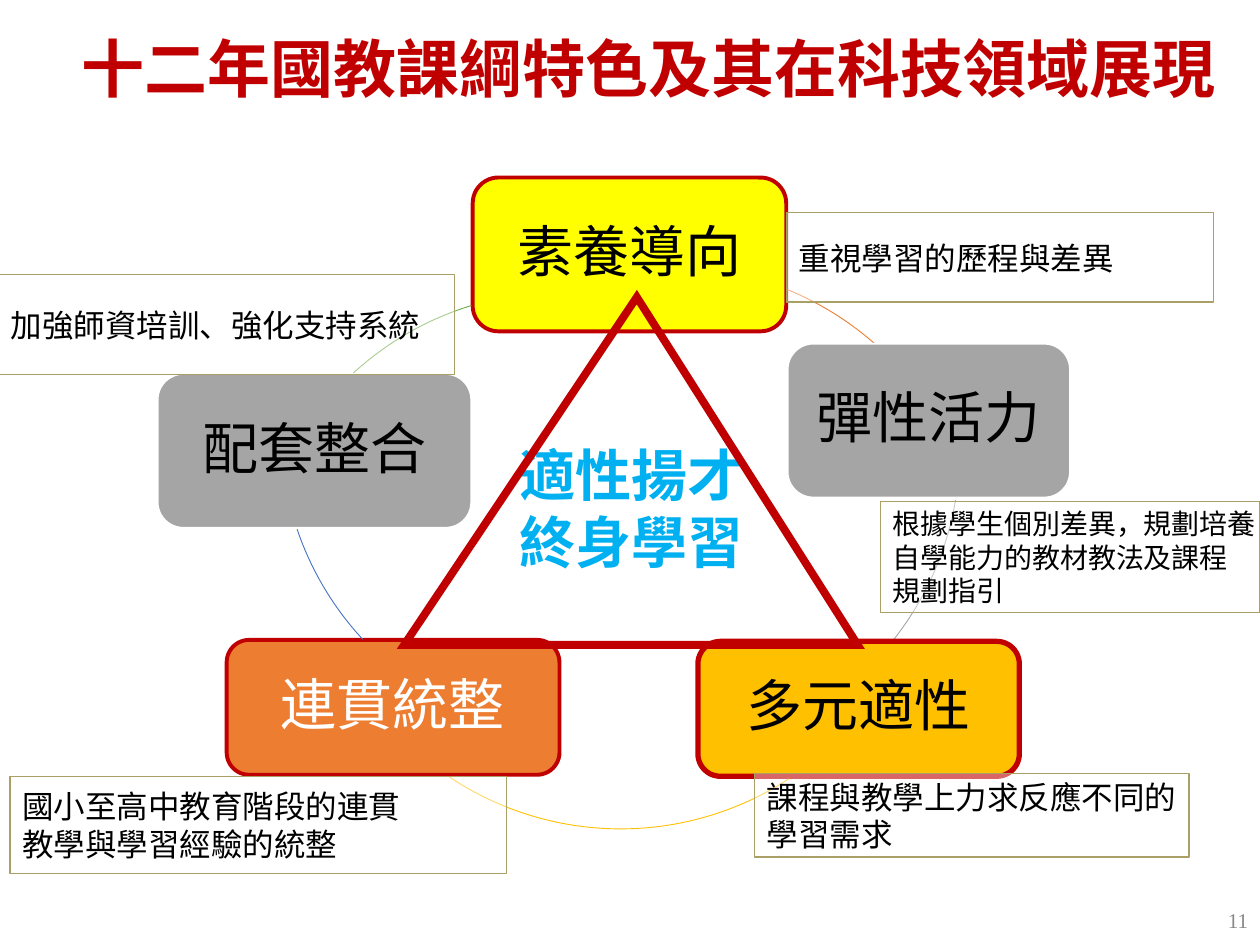
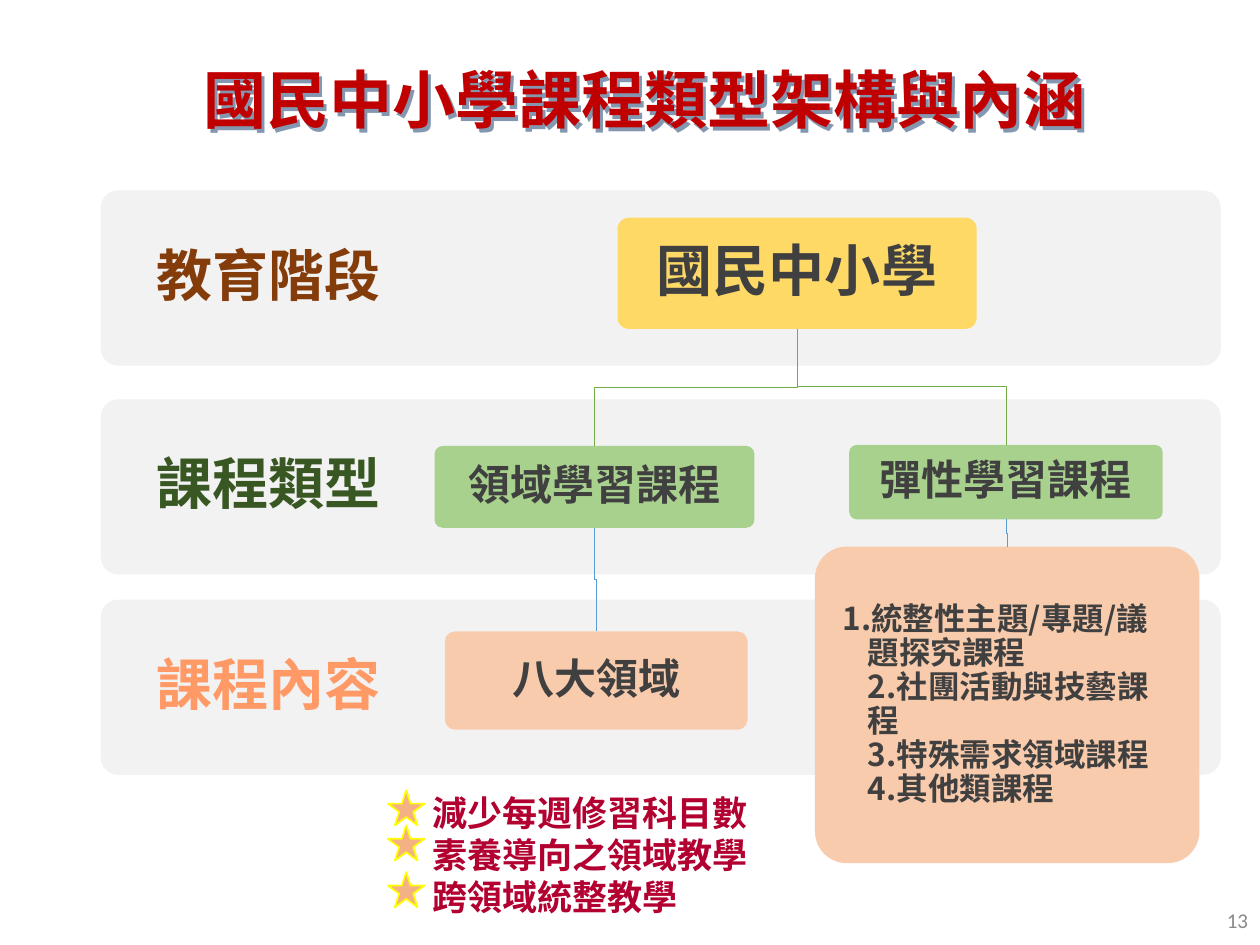
from lxml import etree
from pptx import Presentation
from pptx.dml.color import RGBColor
from pptx.enum.shapes import MSO_SHAPE
from pptx.enum.text import MSO_ANCHOR, PP_ALIGN
from pptx.oxml.ns import qn
from pptx.util import Cm, Pt

ROUNDED, RECTANGLE = MSO_SHAPE.ROUNDED_RECTANGLE, MSO_SHAPE.RECTANGLE
ARC, STAR, TRIANGLE = MSO_SHAPE.ARC, MSO_SHAPE.STAR_5_POINT, MSO_SHAPE.ISOSCELES_TRIANGLE
TOP, MIDDLE = MSO_ANCHOR.TOP, MSO_ANCHOR.MIDDLE
LEFT, CENTER, RIGHT = PP_ALIGN.LEFT, PP_ALIGN.CENTER, PP_ALIGN.RIGHT

CJK = "Noto Sans CJK SC"
BLACK = RGBColor(0x00, 0x00, 0x00)
WHITE = RGBColor(0xFF, 0xFF, 0xFF)
RED = RGBColor(0xC0, 0x00, 0x00)
CRIMSON = RGBColor(0xB2, 0x00, 0x30)
YELLOW = RGBColor(0xFF, 0xFF, 0x00)
GOLD = RGBColor(0xFF, 0xC0, 0x00)
PALE_GOLD = RGBColor(0xFF, 0xD9, 0x66)
ORANGE = RGBColor(0xED, 0x7D, 0x31)
PEACH = RGBColor(0xF8, 0xCB, 0xAD)
STAR_PEACH = RGBColor(0xF4, 0xB1, 0x83)
SALMON = RGBColor(0xFF, 0x99, 0x66)
BROWN = RGBColor(0x84, 0x3C, 0x0B)
GREEN = RGBColor(0x70, 0xAD, 0x47)
PALE_GREEN = RGBColor(0xA9, 0xD1, 0x8E)
DARK_GREEN = RGBColor(0x38, 0x57, 0x23)
BLUE = RGBColor(0x44, 0x72, 0xC4)
LIGHT_BLUE = RGBColor(0x5B, 0x9B, 0xD5)
SKY = RGBColor(0x00, 0xB0, 0xF0)
GRAY = RGBColor(0xA5, 0xA5, 0xA5)
BAND_GRAY = RGBColor(0xF2, 0xF2, 0xF2)
DARK_GRAY = RGBColor(0x40, 0x40, 0x40)
NUMBER_GRAY = RGBColor(0x89, 0x89, 0x89)
KHAKI = RGBColor(0xAA, 0xA0, 0x66)
SHADOW_BLUE = "8497B0"

TITLE_STYLE = {"size": 36, "color": RED, "bold": True}


def write(box, lines, size, color, bold=False, font=CJK, align=LEFT, anchor=TOP,
          wrap=True, inset=(0.25, 0.13), spacing=1.0):
    frame = box.text_frame
    side, edge = (Cm(value) for value in inset)
    layout = {"margin_left": side, "margin_right": side, "margin_top": edge,
              "margin_bottom": edge, "word_wrap": wrap, "vertical_anchor": anchor}
    for name, value in layout.items():
        setattr(frame, name, value)
    for index, line in enumerate(lines):
        para = frame.add_paragraph() if index else frame.paragraphs[0]
        para.alignment = align
        para.line_spacing = spacing
        span = para.add_run()
        span.text = line
        for name, value in {"size": Pt(size), "bold": bold, "name": font}.items():
            setattr(span.font, name, value)
        span.font.color.rgb = color
        etree.SubElement(span.font._element, qn("a:ea"), typeface=font)


def add_text(page, place, lines, **style):
    box = page.shapes.add_textbox(*map(Cm, place))
    write(box, lines, **style)
    return box


def paint(shape, fill=None, line=None, width=0.5):
    shape.shadow.inherit = False
    if fill is None:
        shape.fill.background()
    else:
        shape.fill.solid()
        shape.fill.fore_color.rgb = fill
    if line is None:
        shape.line.fill.background()
    else:
        shape.line.color.rgb = line
        shape.line.width = Pt(width)


def add_figure(page, kind, place, fill=None, line=None, width=0.5, adjust=()):
    shape = page.shapes.add_shape(kind, *map(Cm, place))
    for index, value in enumerate(adjust):
        shape.adjustments[index] = value
    paint(shape, fill, line, width)
    return shape


def add_arc(page, left, top, start, end, color):
    diameter, degree = 12.42, 0.6
    add_figure(page, ARC, (left, top, diameter, diameter), line=color,
               adjust=(start * degree, end * degree))


def add_feature(page, place, label, fill, line, width, color=BLACK):
    box = add_figure(page, ROUNDED, place, fill, line, width)
    write(box, [label], 32, color, align=CENTER, anchor=MIDDLE, spacing=0.9)


def add_note(page, place, lines, size=18):
    box = add_figure(page, RECTANGLE, place, WHITE, KHAKI, 0.75)
    tint = box.element.spPr.find(qn("a:solidFill"))[0]
    etree.SubElement(tint, qn("a:alpha"), val="40000")
    write(box, lines, size, BLACK, anchor=MIDDLE, wrap=False)


def add_node(page, place, lines, fill, size, **style):
    box = add_figure(page, ROUNDED, place, fill, adjust=[0.1])
    style = {"align": CENTER, "inset": (0.25, 0.25), **style}
    write(box, lines, size, DARK_GRAY, bold=True, anchor=MIDDLE, spacing=0.9, **style)
    return box


def add_band(page, top, label, color):
    left, height = 2.03, 3.53
    add_figure(page, ROUNDED, (left, top, 22.58, height), BAND_GRAY, adjust=[0.1])
    add_text(page, (left, top, 6.78, height), [label], size=32, color=color, bold=True,
             align=CENTER, anchor=MIDDLE, inset=(0.64, 0.64), spacing=0.9)


def join_nodes(page, parent, child, color):
    start_x = parent.left + parent.width // 2
    start_y = parent.top + parent.height
    end_x = child.left + child.width // 2
    bend_y = (start_y + child.top) // 2
    builder = page.shapes.build_freeform(start_x, start_y)
    builder.add_line_segments(
        [(start_x, bend_y), (end_x, bend_y), (end_x, child.top)], close=False)
    paint(builder.convert_to_shape(), line=color)


def add_title_shadow(box):
    effects = box.element.spPr.find(qn("a:effectLst"))
    shadow = etree.SubElement(effects, qn("a:outerShdw"), dist="38100", dir="2700000",
                              algn="tl", rotWithShape="0")
    etree.SubElement(shadow, qn("a:srgbClr"), val=SHADOW_BLUE)


def add_page_number(page, number, font):
    add_text(page, (19.69, 18.03, 5.72, 1.02), [number], size=12, color=NUMBER_GRAY,
             font=font, align=RIGHT, anchor=MIDDLE)


def build_features(page):
    add_feature(page, (9.53, 3.58, 6.32, 3.1), "素養導向", YELLOW, RED, 2.25)
    add_arc(page, 7.32, 5.38, 292.2, 311.35, ORANGE)
    add_feature(page, (15.88, 6.93, 5.69, 3.1), "彈性活力", GRAY, WHITE, 1)
    add_arc(page, 6.93, 2.84, 9.6, 38.5, GRAY)
    add_feature(page, (14.07, 12.93, 6.48, 2.72), "多元適性", GOLD, RED, 3)
    add_arc(page, 6.3, 4.29, 56.9, 123.8, GOLD)
    add_feature(page, (4.57, 12.9, 6.71, 2.72), "連貫統整", ORANGE, RED, 2.25, WHITE)
    add_arc(page, 5.66, 2.46, 137.2, 161.2, BLUE)
    add_feature(page, (3.18, 7.54, 6.32, 3.1), "配套整合", GRAY, WHITE, 1)
    add_arc(page, 5.11, 5.89, 227.5, 253, GREEN)

    add_page_number(page, "11", "Times New Roman")
    add_text(page, (9.73, 8.74, 5.99, 3), ["適性揚才", "終身學習"], size=32, color=SKY,
             bold=True, align=CENTER, anchor=MIDDLE)
    triangle = add_figure(page, TRIANGLE, (8.15, 5.99, 9.14, 7.01), line=RED, width=4.5,
                          adjust=[0.513])
    etree.SubElement(triangle.element.spPr.find(qn("a:ln")), qn("a:miter"), lim="800000")
    add_text(page, (1.4, 0.46, 23.6, 1.8), ["十二年國教課綱特色及其在科技領域展現"],
             wrap=False, **TITLE_STYLE)

    add_note(page, (15.85, 4.29, 8.61, 1.8), ["重視學習的歷程與差異"])
    add_note(page, (17.75, 10.11, 7.65, 2.24),
             ["根據學生個別差異，規劃培養", "自學能力的教材教法及課程", "規劃指引"], 16)
    add_note(page, (15.21, 15.6, 8.76, 1.68), ["課程與教學上力求反應不同的", "學習需求"])
    add_note(page, (0.2, 15.65, 10.01, 1.96),
             ["國小至高中教育階段的連貫", "教學與學習經驗的統整"])
    add_note(page, (-0.03, 5.54, 9.19, 2.01), ["加強師資培訓、強化支持系統"])


def build_curriculum(page):
    title = add_figure(page, ROUNDED, (1.35, 0.97, 23.27, 2.54))
    write(title, ["國民中小學課程類型架構與內涵"], align=CENTER, **TITLE_STYLE)
    add_title_shadow(title)

    add_band(page, 12.09, "課程內容", SALMON)
    add_band(page, 8.05, "課程類型", DARK_GREEN)
    add_band(page, 3.84, "教育階段", BROWN)

    school = add_node(page, (12.45, 4.39, 7.24, 2.24), ["國民中小學"], PALE_GOLD, 32)
    domain = add_node(page, (8.76, 8.99, 6.45, 1.65), ["領域學習課程"], PALE_GREEN, 24)
    fields = add_node(page, (8.97, 12.73, 6.1, 1.98), ["八大領域"], PEACH, 24)
    flexible = add_node(page, (17.12, 8.97, 6.32, 1.5), ["彈性學習課程"], PALE_GREEN, 24)
    choices = add_node(
        page, (16.43, 11.02, 7.75, 6.38),
        ["1.統整性主題/專題/議題探究課程", "2.社團活動與技藝課程",
         "3.特殊需求領域課程", "4.其他類課程"],
        PEACH, 18, align=LEFT, inset=(0.37, 0.37))
    for index, para in enumerate(choices.text_frame.paragraphs):
        settings = para._p.get_or_add_pPr()
        settings.set("marL", str(Cm(0.51)))
        settings.set("indent", str(0 if index else -Cm(0.51)))

    for parent, child, color in ((school, domain, GREEN), (school, flexible, GREEN),
                                 (domain, fields, LIGHT_BLUE),
                                 (flexible, choices, LIGHT_BLUE)):
        join_nodes(page, parent, child, color)

    add_text(page, (8.46, 15.82, 9.3, 2.82),
             ["減少每週修習科目數", "素養導向之領域教學", "跨領域統整教學"],
             size=20, color=CRIMSON, bold=True)
    add_page_number(page, "13", "Calibri")
    for top in (15.93, 16.64, 17.58):
        add_figure(page, STAR, (7.82, top, 0.74, 0.71), STAR_PEACH, YELLOW, 1)


def main():
    deck = Presentation()
    deck.slide_width, deck.slide_height = Cm(25.4), Cm(19.05)
    blank = deck.slide_layouts[6]
    for build in (build_features, build_curriculum):
        build(deck.slides.add_slide(blank))
    deck.save("out.pptx")


if __name__ == "__main__":
    main()
